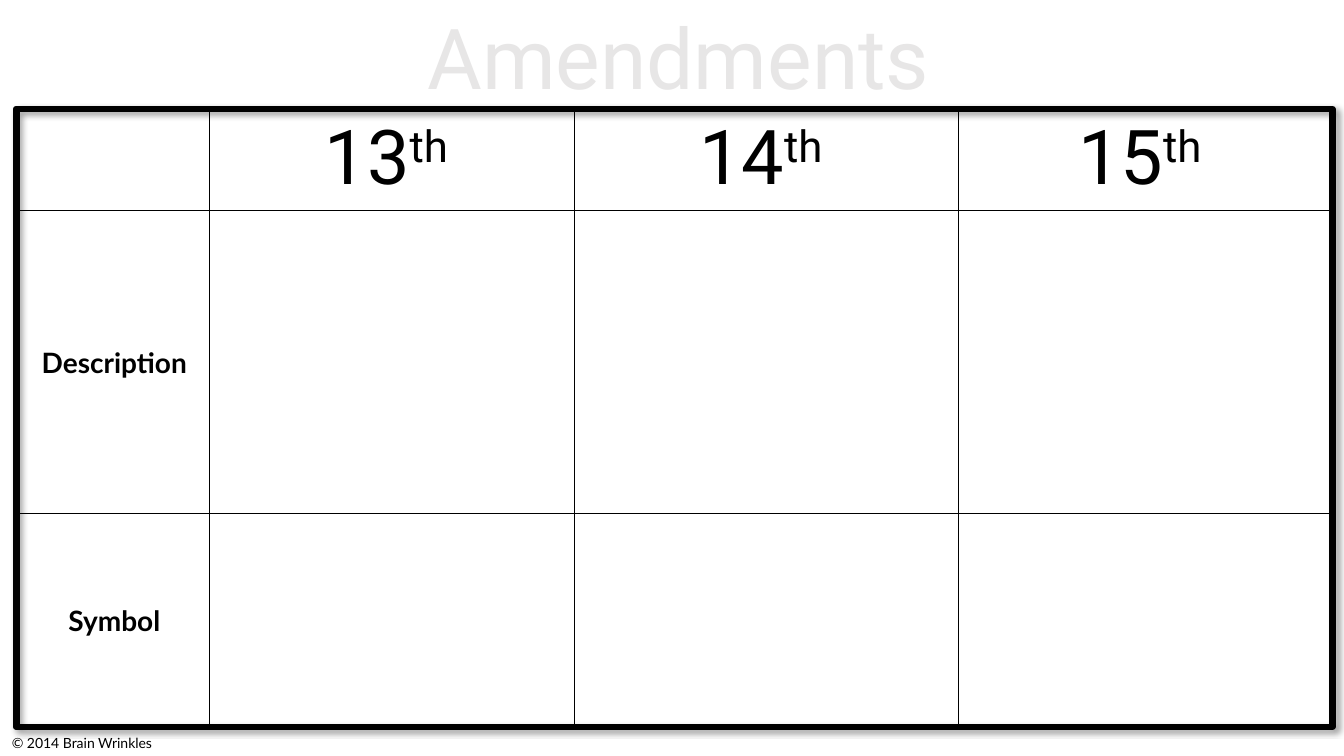
import pptx
import pptx.dml.color
import pptx.enum.shapes
import pptx.enum.text
import pptx.oxml
import pptx.util

Pt = pptx.util.Pt
Align = pptx.enum.text.PP_ALIGN
Anchor = pptx.enum.text.MSO_ANCHOR
NS = 'xmlns:a="http://schemas.openxmlformats.org/drawingml/2006/main"'
BLACK = "000000"

HEAD = {"name": "Roboto", "size": Pt(54), "bold": False}
LABEL = {"name": "Lato", "size": Pt(20), "bold": True}
TITLE = {"name": "Roboto", "size": Pt(60), "bold": False}
NOTE = {"name": "Lato", "size": Pt(10), "bold": False}

COLS = [136, 260.5, 274.5, 267]
ROWS = [71.5, 216.5, 152]
NAMES = ["Description", "Symbol"]


def color(code):
    return pptx.dml.color.RGBColor.from_string(code)


def xml(body):
    return pptx.oxml.parse_xml(body.replace(">", f" {NS}>", 1))


def line(tag, width, code):
    return xml(f'<a:{tag} w="{Pt(width)}"><a:solidFill><a:srgbClr val="{code}"/>'
               f'</a:solidFill></a:{tag}>')


def write(para, text, style, code=BLACK):
    run = para.add_run()
    run.text = text
    for key, value in style.items():
        setattr(run.font, key, value)
    run.font.color.rgb = color(code)
    return run._r.get_or_add_rPr()


def place(shape, left, top, width, height):
    box = {"left": left, "top": top, "width": width, "height": height}
    for key, value in box.items():
        setattr(shape, key, Pt(value))


def add_title(slide, text):
    title = slide.shapes.title
    place(title, 9.4, 0, 950.4, 80)
    frame = title.text_frame
    form = {"word_wrap": True, "vertical_anchor": Anchor.TOP,
            "auto_size": pptx.enum.text.MSO_AUTO_SIZE.NONE}
    for key, value in form.items():
        setattr(frame, key, value)
    para = frame.paragraphs[0]
    para.alignment = Align.CENTER
    para.line_spacing = 1.0
    props = write(para, text, TITLE, "E7E6E6")
    props.insert(0, line("ln", 2.25, BLACK))


def add_note(slide, text):
    box = slide.shapes.add_textbox(Pt(1.4), Pt(521.3), Pt(208.8), Pt(19.4))
    box.text_frame.word_wrap = True
    write(box.text_frame.paragraphs[0], text, NOTE)


def add_grid(slide):
    shape = slide.shapes.add_table(len(ROWS), len(COLS), Pt(13.7), Pt(78.5),
                                   Pt(sum(COLS)), Pt(sum(ROWS)))
    grid = shape.table
    grid.first_row = grid.horz_banding = False
    for col, width in zip(grid.columns, COLS):
        col.width = Pt(width)
    for row, height in zip(grid.rows, ROWS):
        row.height = Pt(height)

    # Plain cells with thin black borders
    for cell in grid.iter_cells():
        cell.fill.background()
        props = cell._tc.get_or_add_tcPr()
        for spot, tag in enumerate(["lnL", "lnR", "lnT", "lnB"]):
            props.insert(spot, line(tag, 1, BLACK))
        cell.text_frame.paragraphs[0].alignment = Align.CENTER

    # Column heads with raised endings
    for col in range(1, len(COLS)):
        para = grid.cell(0, col).text_frame.paragraphs[0]
        write(para, str(12 + col), HEAD)
        write(para, "th ", HEAD).set("baseline", "30000")

    # Row labels
    for row, name in enumerate(NAMES, 1):
        cell = grid.cell(row, 0)
        cell.vertical_anchor = Anchor.MIDDLE
        write(cell.text_frame.paragraphs[0], name, LABEL)


def add_frame(slide):
    kind = pptx.enum.shapes.MSO_SHAPE.RECTANGLE
    frame = slide.shapes.add_shape(kind, Pt(11.5), Pt(77.8), Pt(940.3), Pt(441.4))
    frame.fill.background()
    frame.line.color.rgb = color(BLACK)
    frame.line.width = Pt(4.5)
    frame.shadow.inherit = False
    effects = frame._element.spPr.find(
        "{http://schemas.openxmlformats.org/drawingml/2006/main}effectLst")
    effects.append(xml(
        f'<a:outerShdw blurRad="{Pt(4)}" dist="{Pt(3)}" dir="2700000" algn="tl" '
        f'rotWithShape="0"><a:srgbClr val="{BLACK}"><a:alpha val="40000"/>'
        '</a:srgbClr></a:outerShdw>'))


def main():
    deck = pptx.Presentation()
    deck.slide_width, deck.slide_height = Pt(960), Pt(540)
    slide = deck.slides.add_slide(deck.slide_layouts[5])
    add_note(slide, "© 2014 Brain Wrinkles")
    add_title(slide, "Amendments")
    add_grid(slide)
    add_frame(slide)
    deck.save("out.pptx")


if __name__ == "__main__":
    main()
